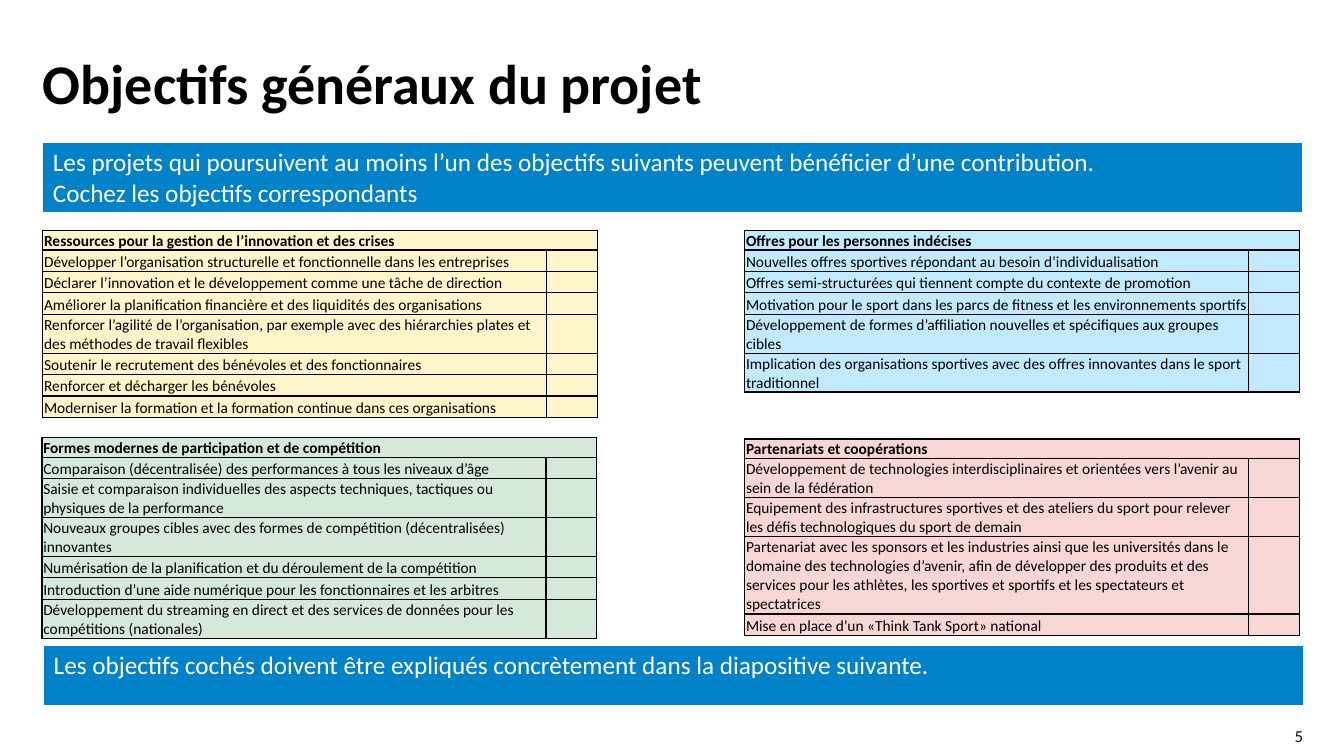
from lxml import etree
from pptx import Presentation
from pptx.dml.color import RGBColor
from pptx.enum.text import MSO_ANCHOR, PP_ALIGN
from pptx.oxml.ns import qn
from pptx.util import Cm, Pt

TOP, MIDDLE, BOTTOM = MSO_ANCHOR.TOP, MSO_ANCHOR.MIDDLE, MSO_ANCHOR.BOTTOM
LEFT, RIGHT = PP_ALIGN.LEFT, PP_ALIGN.RIGHT
FONT = "Calibri"
COLORS = {
    "black": "000000", "white": "FFFFFF", "blue": "0081C8",
    "yellow": "FFF5CA", "sky": "C1E9FF", "green": "D4E9DA", "red": "F7D6D4",
}
GOAL_SIZE = 11
GOAL_WIDTHS = (12.7, 1.27)
HEADER_HEIGHT = 0.5
LINE_HEIGHTS = {1: 0.54, 2: 0.98, 4: 1.95}  # row height in cm by number of text lines
GOAL_MARGINS = {
    "margin_left": Cm(0.03), "margin_right": Cm(0.03),
    "margin_top": Cm(0.03), "margin_bottom": 0, "vertical_anchor": BOTTOM,
}
GOAL_BORDERS = {"L": 1, "R": 1, "T": 1, "B": 1}
BANNER_BORDERS = {"L": 1, "R": 1, "T": 1, "B": 3}

# left, top, colour, heading, (goal, number of lines)
GOAL_TABLES = [
    (1.08, 5.8, "yellow", "Ressources pour la gestion de l’innovation et des crises", [
        ("Développer l’organisation structurelle et fonctionnelle dans les entreprises", 1),
        ("Déclarer l’innovation et le développement comme une tâche de direction", 1),
        ("Améliorer la planification financière et des liquidités des organisations", 1),
        ("Renforcer l’agilité de l’organisation, par exemple avec des hiérarchies plates et "
         "des méthodes de travail flexibles", 2),
        ("Soutenir le recrutement des bénévoles et des fonctionnaires", 1),
        ("Renforcer et décharger les bénévoles", 1),
        ("Moderniser la formation et la formation continue dans ces organisations", 1),
    ]),
    (18.77, 5.8, "sky", "Offres pour les personnes indécises", [
        ("Nouvelles offres sportives répondant au besoin d’individualisation", 1),
        ("Offres semi-structurées qui tiennent compte du contexte de promotion", 1),
        ("Motivation pour le sport dans les parcs de fitness et les environnements sportifs", 1),
        ("Développement de formes d’affiliation nouvelles et spécifiques aux groupes cibles", 2),
        ("Implication des organisations sportives avec des offres innovantes dans le sport "
         "traditionnel", 2),
    ]),
    (1.06, 11.02, "green", "Formes modernes de participation et de compétition", [
        ("Comparaison (décentralisée) des performances à tous les niveaux d’âge", 1),
        ("Saisie et comparaison individuelles des aspects techniques, tactiques ou "
         "physiques de la performance", 2),
        ("Nouveaux groupes cibles avec des formes de compétition (décentralisées) "
         "innovantes", 2),
        ("Numérisation de la planification et du déroulement de la compétition", 1),
        ("Introduction d’une aide numérique pour les fonctionnaires et les arbitres", 1),
        ("Développement du streaming en direct et des services de données pour les "
         "compétitions (nationales)", 2),
    ]),
    (18.77, 11.06, "red", "Partenariats et coopérations", [
        ("Développement de technologies interdisciplinaires et orientées vers l’avenir au "
         "sein de la fédération", 2),
        ("Equipement des infrastructures sportives et des ateliers du sport pour relever "
         "les défis technologiques du sport de demain", 2),
        ("Partenariat avec les sponsors et les industries ainsi que les universités dans le "
         "domaine des technologies d’avenir, afin de développer des produits et des "
         "services pour les athlètes, les sportives et sportifs et les spectateurs et "
         "spectatrices", 4),
        ("Mise en place d’un «Think Tank Sport» national", 1),
    ]),
]
BANNERS = [
    (1.08, 3.6, 1.77, [
        "Les projets qui poursuivent au moins l’un des objectifs suivants peuvent "
        "bénéficier d’une contribution.",
        "Cochez les objectifs correspondants",
    ]),
    (1.1, 16.26, 1.54, [
        "Les objectifs cochés doivent être expliqués concrètement dans la diapositive "
        "suivante.",
    ]),
]


def rgb(color):
    return RGBColor.from_string(COLORS[color])


def set_attributes(target, values):
    for name, value in values.items():
        setattr(target, name, value)


def write(paragraph, text, size, color="black", bold=False):
    run = paragraph.add_run()
    run.text = text
    set_attributes(run.font, {"name": FONT, "size": Pt(size), "bold": bold})
    run.font.color.rgb = rgb(color)


def add_text(slide, box, text, size, anchor, alignment=LEFT, spacing=1.0, bold=False):
    frame = slide.shapes.add_textbox(*map(Cm, box)).text_frame
    set_attributes(frame, {
        "word_wrap": True, "vertical_anchor": anchor,
        "margin_left": 0, "margin_right": 0, "margin_top": 0, "margin_bottom": 0,
    })
    paragraph = frame.paragraphs[0]
    set_attributes(paragraph, {"alignment": alignment, "line_spacing": spacing})
    write(paragraph, text, size, bold=bold)


def style_cell(cell, fill, border_color, borders):
    properties = cell._tc.get_or_add_tcPr()
    for side, width in borders.items():
        line = etree.SubElement(properties, qn(f"a:ln{side}"), w=str(Pt(width)))
        solid = etree.SubElement(line, qn("a:solidFill"))
        etree.SubElement(solid, qn("a:srgbClr"), val=COLORS[border_color])
    cell.fill.solid()
    cell.fill.fore_color.rgb = rgb(fill)


def add_table(slide, left, top, widths, heights):
    table = slide.shapes.add_table(
        len(heights), len(widths), Cm(left), Cm(top), Cm(sum(widths)), Cm(sum(heights))
    ).table
    set_attributes(table, {"first_row": False, "horz_banding": False})
    for column, width in zip(table.columns, widths):
        column.width = Cm(width)
    for row, height in zip(table.rows, heights):
        row.height = Cm(height)
    return table


def add_goal_table(slide, left, top, color, heading, goals):
    """Add a heading over goals, each with an empty cell to tick."""
    heights = [HEADER_HEIGHT] + [LINE_HEIGHTS[lines] for _, lines in goals]
    table = add_table(slide, left, top, GOAL_WIDTHS, heights)
    table.cell(0, 0).merge(table.cell(0, 1))
    for index, text in enumerate([heading] + [goal for goal, _ in goals]):
        goal_cell, tick_cell = table.cell(index, 0), table.cell(index, 1)
        for cell in (goal_cell, tick_cell):
            style_cell(cell, color, "black", GOAL_BORDERS)
            set_attributes(cell, GOAL_MARGINS)
        write(goal_cell.text_frame.paragraphs[0], text, GOAL_SIZE, bold=index == 0)
        # A small end mark keeps the empty cell from stretching its row
        etree.SubElement(tick_cell.text_frame.paragraphs[0]._p, qn("a:endParaRPr"),
                         sz=str(GOAL_SIZE * 100))


def add_banner(slide, left, top, height, lines):
    cell = add_table(slide, left, top, [31.75], [height]).cell(0, 0)
    style_cell(cell, "blue", "white", BANNER_BORDERS)
    frame = cell.text_frame
    for index, text in enumerate(lines):
        paragraph = frame.add_paragraph() if index else frame.paragraphs[0]
        write(paragraph, text, 18, "white")


def main():
    presentation = Presentation()
    presentation.slide_width, presentation.slide_height = Cm(33.87), Cm(19.05)
    slide = presentation.slides.add_slide(presentation.slide_layouts[6])
    add_text(slide, (31.65, 18.29, 1.19, 0.51), "5", 12, MIDDLE, alignment=RIGHT)
    add_text(slide, (1.08, 1.42, 25.4, 2.16), "Objectifs généraux du projet", 40, TOP,
             spacing=0.9, bold=True)
    for goal_table in GOAL_TABLES:
        add_goal_table(slide, *goal_table)
    for banner in BANNERS:
        add_banner(slide, *banner)
    presentation.save("out.pptx")


if __name__ == "__main__":
    main()
